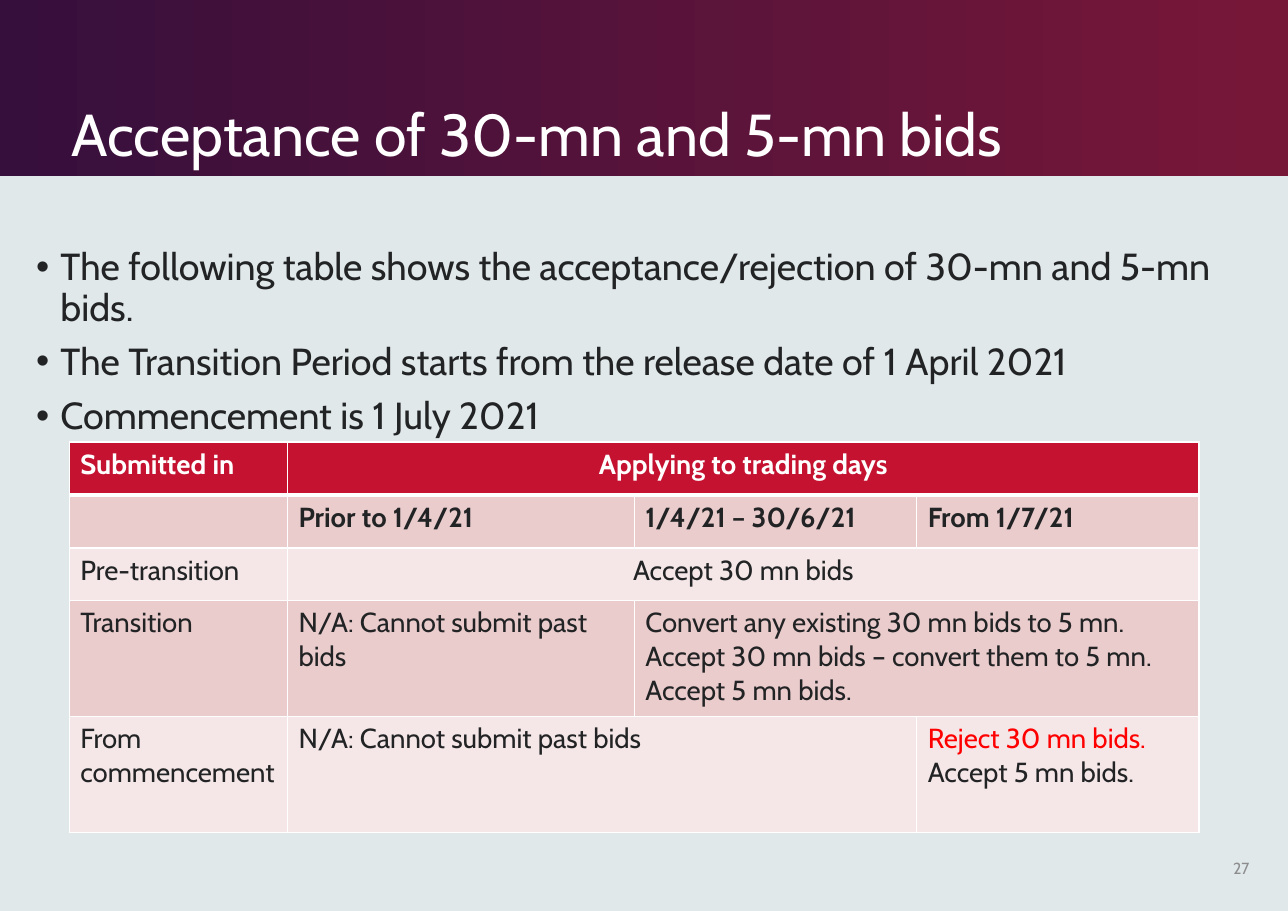
"""Build the slide on acceptance of 30-mn and 5-mn bids."""
import dataclasses

import lxml.etree
import pptx
import pptx.dml.color
import pptx.enum.shapes
import pptx.enum.text
import pptx.oxml.ns
import pptx.util

Cm = pptx.util.Cm
Pt = pptx.util.Pt
Color = pptx.dml.color.RGBColor
Align = pptx.enum.text.PP_ALIGN
Anchor = pptx.enum.text.MSO_ANCHOR
qn = pptx.oxml.ns.qn

FONT = "Cabin"
WHITE = Color(0xFF, 0xFF, 0xFF)
INK = Color(0x22, 0x23, 0x24)
GREY = Color(0x8D, 0x8D, 0x8E)
RED = Color(0xFF, 0x00, 0x00)
CRIMSON = Color(0xC4, 0x12, 0x30)
ROSE = Color(0xEA, 0xCC, 0xCD)
BLUSH = Color(0xF5, 0xE7, 0xE8)
PLUM = Color(0x36, 0x0F, 0x3C)
WINE = Color(0x77, 0x17, 0x38)
MIST = Color(0xE0, 0xE8, 0xEA)

BULLETS = (
    "The following table shows the acceptance/rejection of 30-mn and 5-mn bids.",
    "The Transition Period starts from the release date of 1 April 2021",
    "Commencement is 1 July 2021",
)
COLUMN_WIDTHS = (5.03, 8.0, 6.51, 6.51)


@dataclasses.dataclass(frozen=True)
class Entry:
    text: str
    column: int
    columns: int = 1
    align: Align = Align.LEFT
    first_line_color: Color | None = None


@dataclasses.dataclass(frozen=True)
class Row:
    height: float
    fill: Color
    entries: tuple[Entry, ...]
    color: Color = INK
    bold: bool = False
    top_line: float = 1
    bottom_line: float = 1


ROWS = (
    Row(1.22, CRIMSON, (
        Entry("Submitted in", 0),
        Entry("Applying to trading days", 1, 3, Align.CENTER),
    ), color=WHITE, bold=True, bottom_line=3),
    Row(1.22, ROSE, (
        Entry("Prior to 1/4/21", 1),
        Entry("1/4/21 – 30/6/21", 2),
        Entry("From 1/7/21", 3),
    ), bold=True, top_line=3),
    Row(1.22, BLUSH, (
        Entry("Pre-transition", 0),
        Entry("Accept 30 mn bids", 1, 3, Align.CENTER),
    )),
    Row(2.67, ROSE, (
        Entry("Transition", 0),
        Entry("N/A: Cannot submit past bids", 1),
        Entry("Convert any existing 30 mn bids to 5 mn.\n"
              "Accept 30 mn bids – convert them to 5 mn.\n"
              "Accept 5 mn bids.", 2, 2),
    )),
    Row(2.67, BLUSH, (
        Entry("From commencement", 0),
        Entry("N/A: Cannot submit past bids", 1, 2),
        Entry("Reject 30 mn bids.\nAccept 5 mn bids.", 3, first_line_color=RED),
    )),
)


def place(box, left: float, top: float, width: float, height: float) -> None:
    box.left, box.top, box.width, box.height = map(Cm, (left, top, width, height))


def format_para(para, size: float, color: Color, align: Align = Align.LEFT,
                bold: bool = False) -> None:
    para.alignment = align
    for span in para.runs:
        span.font.name = FONT
        span.font.size = Pt(size)
        span.font.bold = bold
        span.font.color.rgb = color


def draw_banner(page) -> None:
    banner = page.shapes.add_shape(
        pptx.enum.shapes.MSO_SHAPE.RECTANGLE, 0, 0, Cm(29.7), Cm(4.06))
    banner.shadow.inherit = False
    banner.line.fill.background()
    banner.fill.gradient()
    banner.fill.gradient_angle = 0
    for stop, color, position in zip(
            banner.fill.gradient_stops, (PLUM, WINE), (0, 0.99)):
        stop.color.rgb = color
        stop.position = position
    page.shapes._spTree.insert(2, banner._element)


def write_title(page) -> None:
    title = page.shapes.title
    place(title, 1.4, 0.41, 24.16, 3.63)
    title.text_frame.text = "Acceptance of 30-mn and 5-mn bids"
    title.text_frame.auto_size = pptx.enum.text.MSO_AUTO_SIZE.NONE
    title.text_frame.vertical_anchor = Anchor.BOTTOM
    para = title.text_frame.paragraphs[0]
    para.line_spacing = 0.9
    format_para(para, 38.6, WHITE)


def write_bullets(page) -> None:
    body = page.placeholders[1]
    place(body, 0.58, 5.59, 28.5, 13.34)
    body.text_frame.text = "\n".join(BULLETS)
    body.text_frame.auto_size = pptx.enum.text.MSO_AUTO_SIZE.NONE
    for para in body.text_frame.paragraphs:
        para.line_spacing = 0.9
        para.space_before = Pt(8.8)
        format_para(para, 24.6, INK)
        properties = para._p.get_or_add_pPr()
        properties.set("marL", str(Cm(0.56)))
        properties.set("indent", str(Cm(-0.56)))


def draw_borders(cell, row: Row) -> None:
    properties = cell._tc.get_or_add_tcPr()
    widths = {"lnL": 1, "lnR": 1, "lnT": row.top_line, "lnB": row.bottom_line}
    for index, (side, width) in enumerate(widths.items()):
        line = lxml.etree.Element(qn(f"a:{side}"), w=str(Pt(width)))
        fill = lxml.etree.SubElement(line, qn("a:solidFill"))
        lxml.etree.SubElement(fill, qn("a:srgbClr"), val=str(WHITE))
        properties.insert(index, line)


def draw_table(page) -> None:
    table = page.shapes.add_table(
        len(ROWS), len(COLUMN_WIDTHS), Cm(1.6), Cm(10.19),
        Cm(sum(COLUMN_WIDTHS)), Cm(sum(row.height for row in ROWS))).table
    for column, width in zip(table.columns, COLUMN_WIDTHS):
        column.width = Cm(width)
    for index, row in enumerate(ROWS):
        table.rows[index].height = Cm(row.height)
        for cell in table.rows[index].cells:
            cell.fill.solid()
            cell.fill.fore_color.rgb = row.fill
            draw_borders(cell, row)
        for entry in row.entries:
            cell = table.cell(index, entry.column)
            if entry.columns > 1:
                cell.merge(table.cell(index, entry.column + entry.columns - 1))
            cell.text_frame.text = entry.text
            for para in cell.text_frame.paragraphs:
                format_para(para, 18, row.color, entry.align, row.bold)
            if entry.first_line_color:
                first_span = cell.text_frame.paragraphs[0].runs[0]
                first_span.font.color.rgb = entry.first_line_color


def write_page_number(page) -> None:
    box = page.shapes.add_textbox(Cm(27.66), Cm(19.46), Cm(1.4), Cm(1.12))
    box.text_frame.word_wrap = True
    box.text_frame.vertical_anchor = Anchor.MIDDLE
    box.text_frame.text = "27"
    format_para(box.text_frame.paragraphs[0], 10.5, GREY, Align.RIGHT)


def main() -> None:
    deck = pptx.Presentation()
    deck.slide_width, deck.slide_height = Cm(29.7), Cm(21)
    page = deck.slides.add_slide(deck.slide_layouts[1])
    page.background.fill.solid()
    page.background.fill.fore_color.rgb = MIST
    draw_banner(page)
    write_title(page)
    write_bullets(page)
    write_page_number(page)
    draw_table(page)
    deck.save("out.pptx")


if __name__ == "__main__":
    main()
